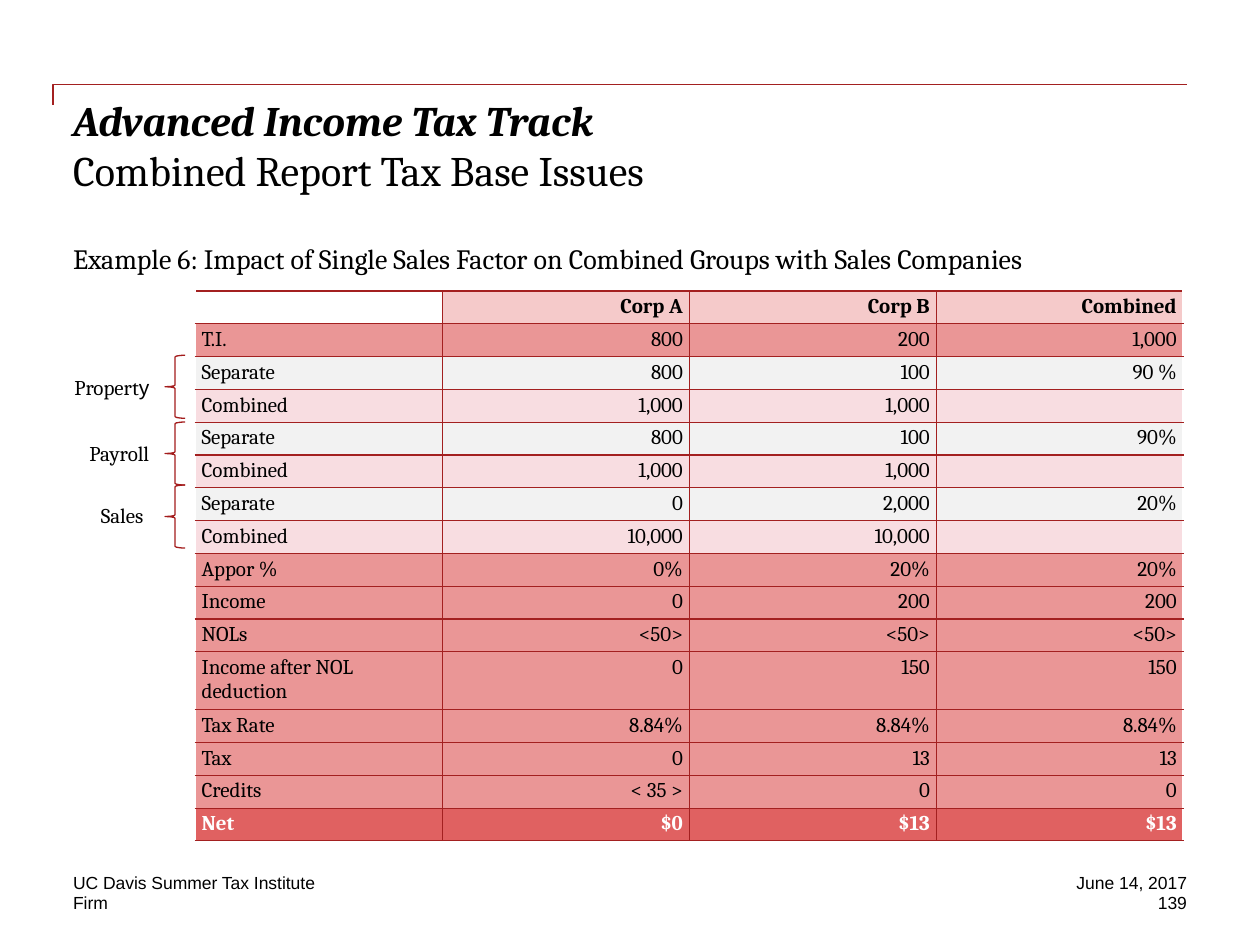
import pptx
import pptx.util
import pptx.dml.color
import pptx.enum.shapes
import pptx.enum.text
import pptx.oxml
import pptx.oxml.ns

Inches = pptx.util.Inches
Pt = pptx.util.Pt
RGBColor = pptx.dml.color.RGBColor
ALIGN = pptx.enum.text.PP_ALIGN
ANCHOR = pptx.enum.text.MSO_ANCHOR

BLACK = RGBColor(0x00, 0x00, 0x00)
WHITE = RGBColor(0xFF, 0xFF, 0xFF)
RULE_RED = RGBColor(0xA3, 0x20, 0x20)
BRACE_RED = RGBColor(0xA3, 0x1C, 0x1C)
HEADER_PINK = RGBColor(0xF5, 0xCA, 0xCA)
ROSE = RGBColor(0xEA, 0x96, 0x96)
LIGHT_GREY = RGBColor(0xF2, 0xF2, 0xF2)
PALE_PINK = RGBColor(0xF8, 0xDD, 0xE1)
NET_RED = RGBColor(0xE0, 0x61, 0x61)


def write_text(paragraph, text, size=12, font="Cambria", color=BLACK,
               bold=False, italic=False, align=ALIGN.LEFT):
    paragraph.alignment = align
    run = paragraph.add_run()
    run.text = text
    run.font.size = Pt(size)
    run.font.name = font
    run.font.color.rgb = color
    run.font.bold = bold
    run.font.italic = italic


def add_text_box(left, top, width, height, wrap=True, anchor=ANCHOR.TOP):
    frame = slide.shapes.add_textbox(
        Inches(left), Inches(top), Inches(width), Inches(height)).text_frame
    frame.margin_left = frame.margin_top = 0
    frame.margin_right = frame.margin_bottom = 0
    frame.word_wrap = wrap
    frame.vertical_anchor = anchor
    return frame.paragraphs[0]


presentation = pptx.Presentation()
presentation.slide_width = Inches(10)
presentation.slide_height = Inches(7.5)
slide = presentation.slides.add_slide(presentation.slide_layouts[6])

# Corner rule above the title
builder = slide.shapes.build_freeform(Inches(0.42), Inches(0.83))
builder.add_line_segments([(Inches(0.42), Inches(0.67)),
                           (Inches(9.42), Inches(0.67))], close=False)
rule = builder.convert_to_shape()
rule.shadow.inherit = False
rule.fill.background()
rule.line.color.rgb = RULE_RED
rule.line.width = Pt(1)

# Title and subtitle
paragraph = add_text_box(0.58, 0.75, 8.83, 1)
write_text(paragraph, "Advanced Income Tax Track", size=24, bold=True, italic=True)
paragraph.add_line_break()
write_text(paragraph, "Combined Report Tax Base Issues", size=24)

paragraph = add_text_box(0.58, 1.92, 8.83, 0.27)
write_text(paragraph, "Example 6: Impact of Single Sales Factor on Combined "
           "Groups with Sales Companies", size=16)

# Table: row fill followed by the cell texts
rows = [
    (HEADER_PINK, "", "Corp A", "Corp B", "Combined"),
    (ROSE, "T.I.", "800", "200", "1,000"),
    (LIGHT_GREY, "Separate", "800", "100", "90 %"),
    (PALE_PINK, "Combined", "1,000", "1,000", ""),
    (LIGHT_GREY, "Separate", "800", "100", "90%"),
    (PALE_PINK, "Combined", "1,000", "1,000", ""),
    (LIGHT_GREY, "Separate", "0", "2,000", "20%"),
    (PALE_PINK, "Combined", "10,000", "10,000", ""),
    (ROSE, "Appor %", "0%", "20%", "20%"),
    (ROSE, "Income", "0", "200", "200"),
    (ROSE, "NOLs", "<50>", "<50>", "<50>"),
    (ROSE, "Income after NOL deduction", "0", "150", "150"),
    (ROSE, "Tax Rate", "8.84%", "8.84%", "8.84%"),
    (ROSE, "Tax", "0", "13", "13"),
    (ROSE, "Credits", "< 35 >", "0", "0"),
    (NET_RED, "Net", "$0", "$13", "$13"),
]
column_count = 4
last_row = len(rows) - 1
table = slide.shapes.add_table(len(rows), column_count, Inches(1.55), Inches(2.31),
                               Inches(7.84), Inches(4.19)).table
table.first_row = False
table.horz_banding = False
for column in table.columns:
    column.width = Inches(1.96)

for row_index, (fill, *texts) in enumerate(rows):
    table.rows[row_index].height = Inches(0.44 if row_index == 11 else 0.25)
    for column_index, text in enumerate(texts):
        cell = table.cell(row_index, column_index)
        cell.margin_left = cell.margin_right = Inches(0.05)
        cell.margin_top = cell.margin_bottom = Inches(0.03)
        paragraph = cell.text_frame.paragraphs[0]
        if text:
            write_text(paragraph, text, bold=row_index in (0, last_row),
                       color=WHITE if row_index == last_row else BLACK,
                       align=ALIGN.RIGHT if column_index else ALIGN.LEFT)
        else:
            paragraph._p.get_or_add_endParaRPr().set("sz", "1200")

        # Borders on every side except the table's outer left and right
        properties = cell._tc.get_or_add_tcPr()
        sides = ["lnL"] * (column_index > 0)
        sides += ["lnR"] * (column_index < column_count - 1) + ["lnT", "lnB"]
        for side in sides:
            properties.append(pptx.oxml.parse_xml(
                f'<a:{side} {pptx.oxml.ns.nsdecls("a")} w="9525"><a:solidFill>'
                f'<a:srgbClr val="{RULE_RED}"/></a:solidFill></a:{side}>'))
        if row_index == 0 and column_index == 0:
            cell.fill.background()
        else:
            cell.fill.solid()
            cell.fill.fore_color.rgb = fill

# Braces that group the factor rows
for top in (2.82, 3.35, 3.85):
    brace = slide.shapes.add_shape(pptx.enum.shapes.MSO_SHAPE.LEFT_BRACE,
                                   Inches(1.31), Inches(top), Inches(0.16), Inches(0.5))
    brace.shadow.inherit = False
    brace.fill.background()
    brace.line.color.rgb = BRACE_RED
    brace.line.width = Pt(0.75)

# Factor labels
paragraph = add_text_box(0.59, 2.97, 0.65, 0.2, wrap=False)
write_text(paragraph, "Propert")
write_text(paragraph, "y", font="Arial")
for label, left, top, width in (("Payroll", 0.71, 3.5, 0.52),
                                ("Sales", 0.8, 3.99, 0.38)):
    write_text(add_text_box(left, top, width, 0.2, wrap=False), label)

# Footer
for text, left, top, width, align, anchor in (
        ("UC Davis Summer Tax Institute", 0.58, 6.92, 5.75, ALIGN.LEFT, ANCHOR.BOTTOM),
        ("Firm", 0.58, 7.08, 2.83, ALIGN.LEFT, ANCHOR.TOP),
        ("June 14, 2017", 7.75, 6.92, 1.67, ALIGN.RIGHT, ANCHOR.TOP),
        ("139", 7.75, 7.08, 1.67, ALIGN.RIGHT, ANCHOR.TOP)):
    paragraph = add_text_box(left, top, width, 0.17, anchor=anchor)
    write_text(paragraph, text, size=10, font="Arial", align=align)

presentation.save("out.pptx")
